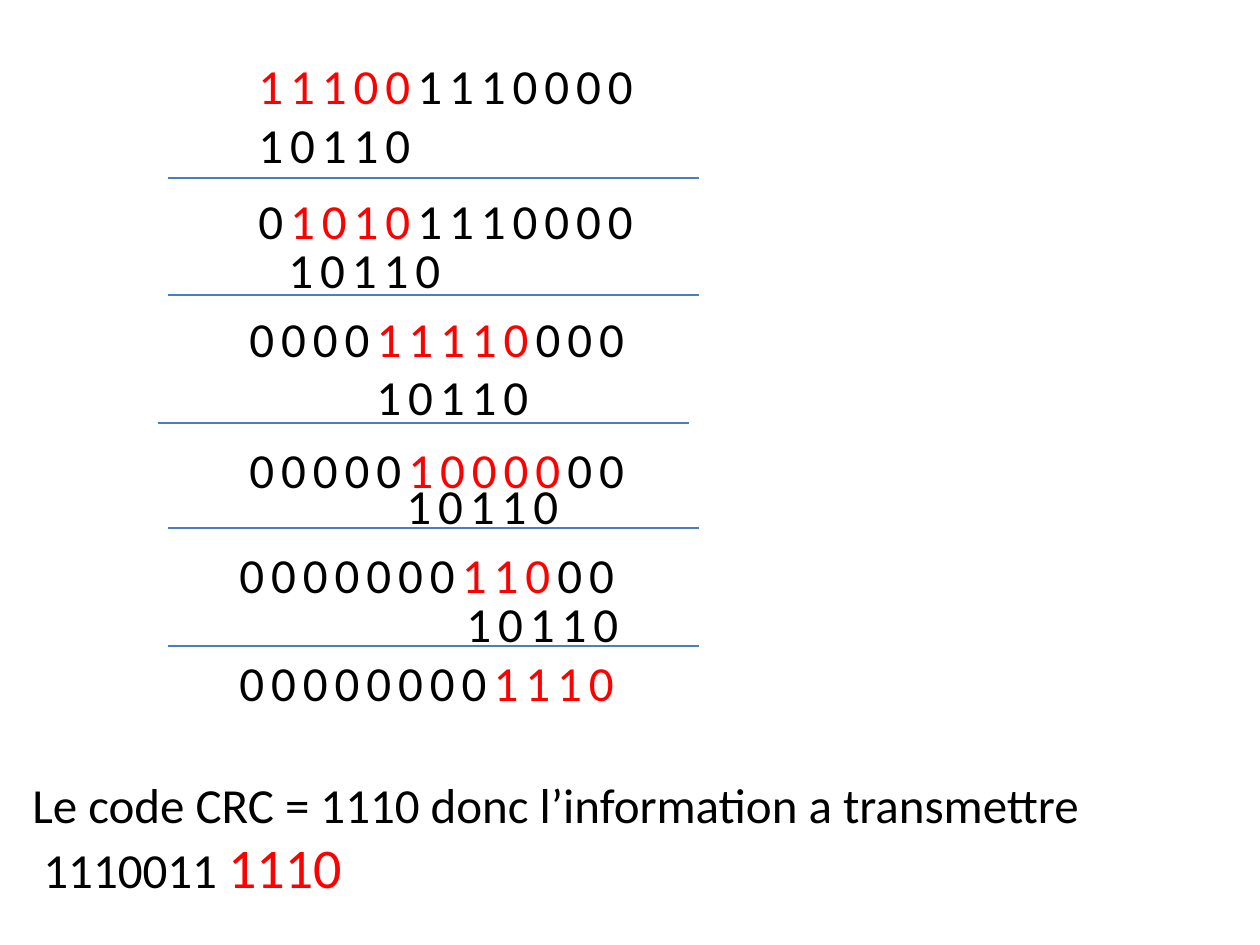
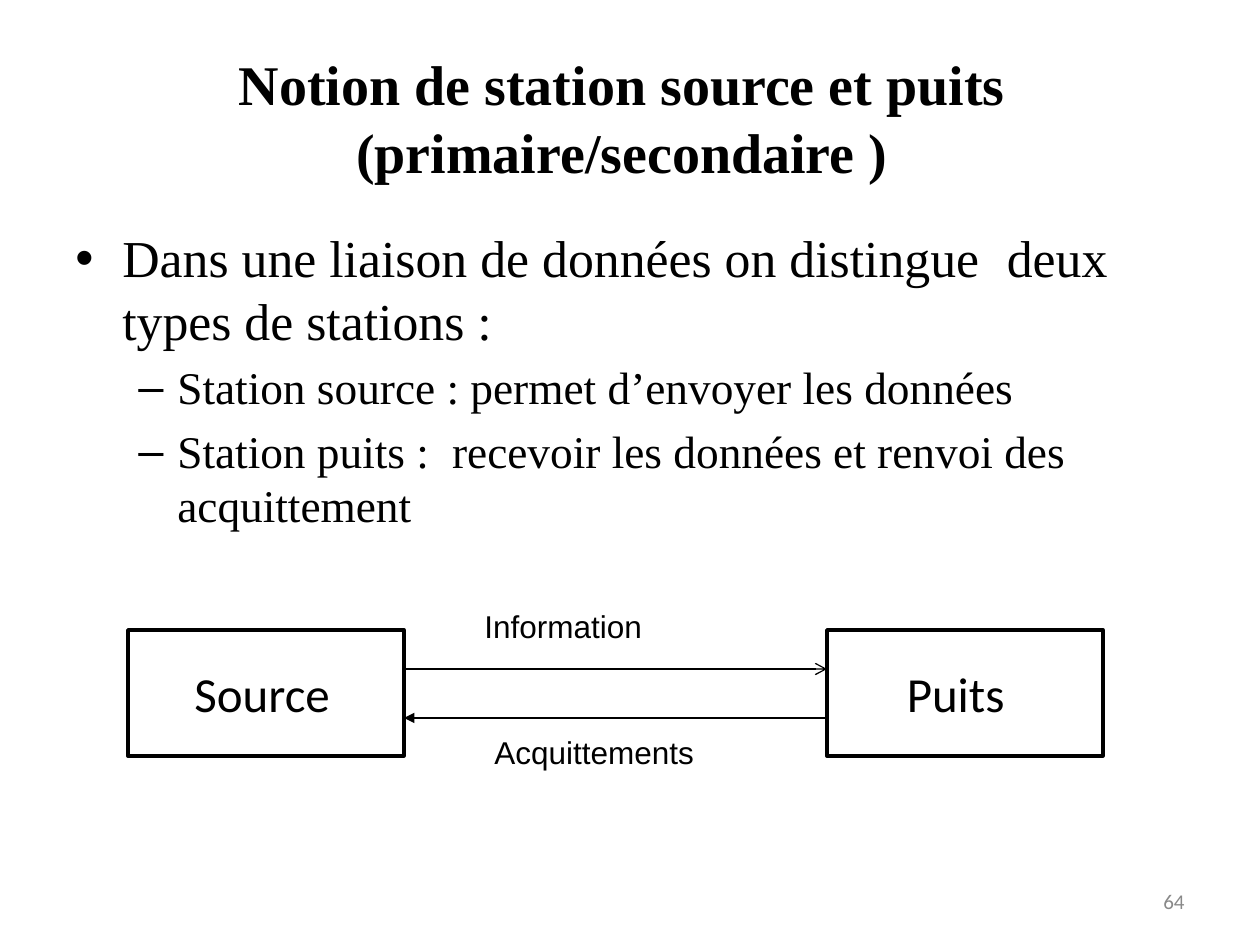
"""Two course slides: a CRC division worked by hand, and source and sink stations."""
from lxml import etree
from pptx import Presentation, util as u
from pptx.dml import color
from pptx.enum import shapes, text
from pptx.oxml import ns

EMU_PER_PX = 914400 / 126
BLACK, WHITE, RED, RULE_BLUE, GREY = "000000", "FFFFFF", "FF0000", "4B7EBC", "898989"
SANS, SERIF, LABEL = "Calibri", "Times New Roman", "Arial"
ALIGN = text.PP_ALIGN
DIVISOR = "10110"

# Each step: dividend left, top, (before, red, after), divisor left, top, rule left, y.
STEPS = [
    (246, 49, ("", "11100", "1110000"), 246, 108, 168, 178),
    (246, 184, ("0", "1010", "1110000"), 276, 233, 168, 295),
    (237, 302, ("0000", "11110", "000"), 364, 360, 158, 423),
    (237, 433, ("00000", "10000", "00"), 394, 469, 168, 528),
    (227, 538, ("0000000", "110", "00"), 454, 587, 168, 646),
]
REMAINDER = (227, 646, ("00000000", "1110", ""))


def px(*lengths):
    """Turn pixel lengths into EMU."""
    return [u.Emu(round(length * EMU_PER_PX)) for length in lengths]


def rgb(value):
    """Return the colour for a hex string."""
    return color.RGBColor.from_string(value)


def add_child(parent, tag, **attributes):
    """Append a drawing element to its parent."""
    return etree.SubElement(parent, ns.qn(tag), attributes)


def add_span(para, content, size=28, font=SANS, colour=BLACK, bold=False, tracking=0):
    """Append formatted text to a paragraph."""
    span = para.add_run()
    span.text = content
    span.font.size, span.font.name, span.font.bold = u.Pt(size), font, bold
    span.font.color.rgb = rgb(colour)
    if tracking:
        span.font._element.set("spc", str(round(tracking * 100)))


def set_frame(shape, anchor=text.MSO_ANCHOR.TOP, right_inset=None):
    """Prepare a text frame and return it."""
    frame = shape.text_frame
    frame.word_wrap = True
    frame.vertical_anchor = anchor
    if right_inset:
        frame.margin_right = px(right_inset)[0]
    return frame


def add_box(page, left, top, width, height, **frame_format):
    """Add an empty text box and return its frame."""
    return set_frame(page.shapes.add_textbox(*px(left, top, width, height)), **frame_format)


def add_text(page, content, left, top, width, height, align=ALIGN.LEFT,
             anchor=text.MSO_ANCHOR.TOP, right_inset=None, **span_format):
    """Add a text box holding one paragraph in one format."""
    frame = add_box(page, left, top, width, height, anchor=anchor, right_inset=right_inset)
    para = frame.paragraphs[0]
    para.alignment = align
    for index, line in enumerate(content.split("\n")):
        if index:
            para.add_line_break()
        add_span(para, line, **span_format)


def add_line(page, start, end, colour, arrow=None):
    """Draw a thin line, with an optional arrowhead at its end."""
    line = page.shapes.add_connector(shapes.MSO_CONNECTOR.STRAIGHT, *px(*start, *end))
    line.line.color.rgb = rgb(colour)
    line.line.width = u.Pt(0.75)
    if arrow:
        add_child(line.line._get_or_add_ln(), "a:tailEnd", type=arrow)
    add_child(line._element.spPr, "a:effectLst")


def add_dividend(page, left, top, parts):
    """Write a row of bits with the active ones in red."""
    para = add_box(page, left, top, 571, 72).paragraphs[0]
    for bits, colour in zip(parts, (BLACK, RED, BLACK)):
        if bits:
            add_span(para, bits, colour=colour, tracking=4)


def add_bullet(para, parts, char, margin, hanging, size):
    """Fill a paragraph as a bulleted item, with a wide space between its parts."""
    properties = para._p.get_or_add_pPr()
    properties.set("marL", str(px(margin)[0]))
    properties.set("indent", str(px(-hanging)[0]))
    add_child(properties, "a:buFont", typeface=LABEL)
    add_child(properties, "a:buChar", char=char)
    for index, part in enumerate(parts):
        if index:
            add_span(para, " ", size=size, font=SERIF, tracking=size / 4)
        add_span(para, part, size=size, font=SERIF)


def add_station(page, name, left, right_inset):
    """Draw a station as an outlined rectangle with its name."""
    station = page.shapes.add_shape(shapes.MSO_SHAPE.RECTANGLE, *px(left, 630, 276, 126))
    station.shadow.inherit = False
    station.fill.solid()
    station.fill.fore_color.rgb = rgb(WHITE)
    station.line.color.rgb = rgb(BLACK)
    station.line.width = u.Pt(2)
    para = set_frame(station, text.MSO_ANCHOR.MIDDLE, right_inset).paragraphs[0]
    para.alignment = ALIGN.CENTER
    add_span(para, name)


def build_division(page):
    """Lay out the CRC division and its result."""
    for left, top, parts, divisor_left, divisor_top, rule_left, rule_y in STEPS:
        add_dividend(page, left, top, parts)
        add_text(page, DIVISOR, divisor_left, divisor_top, 190, 72, tracking=4)
        add_line(page, (rule_left, rule_y), (rule_left + 531, rule_y), RULE_BLUE)
    add_dividend(page, *REMAINDER)
    result = add_box(page, 20, 768, 1100, 140)
    add_span(result.paragraphs[0], "Le code CRC = 1110 donc l’information a transmettre")
    message = result.add_paragraph()
    add_span(message, " 1110011 ")
    add_span(message, "1110", size=32, colour=RED)


def build_stations(page):
    """Lay out the stations slide with its exchange diagram."""
    add_text(page, "Notion de station source et puits\n(primaire/secondaire )", 63, 38, 1134, 158,
             align=ALIGN.CENTER, anchor=text.MSO_ANCHOR.MIDDLE, right_inset=28,
             size=32, font=SERIF, bold=True)
    body = add_box(page, 63, 220, 1134, 272)
    add_bullet(body.paragraphs[0],
               ("Dans une liaison de données on distingue", "deux types de stations :"),
               "•", 47, 47, 29.6)
    for parts in (("Station source : permet d’envoyer les données",),
                  ("Station puits :", "recevoir les données et renvoi des acquittement")):
        para = body.add_paragraph()
        add_bullet(para, parts, "–", 102, 39, 25.9)
        para.space_before = u.Pt(5.2)
    add_station(page, "Source", 128, 20)
    add_station(page, "Puits", 827, 31)
    add_line(page, (404, 669), (827, 669), BLACK, arrow="arrow")
    add_line(page, (827, 718), (404, 718), BLACK, arrow="triangle")
    add_text(page, "Information", 472, 601, 190, 50, size=18, font=LABEL)
    add_text(page, "Acquittements", 482, 727, 232, 50, size=18, font=LABEL)
    add_text(page, "64", 903, 876, 294, 50, align=ALIGN.RIGHT,
             anchor=text.MSO_ANCHOR.MIDDLE, size=12, colour=GREY)


def main():
    """Build and save the deck."""
    deck = Presentation()
    deck.slide_width, deck.slide_height = px(1260, 945)
    for build in (build_division, build_stations):
        build(deck.slides.add_slide(deck.slide_layouts[6]))
    deck.save("out.pptx")


if __name__ == "__main__":
    main()
